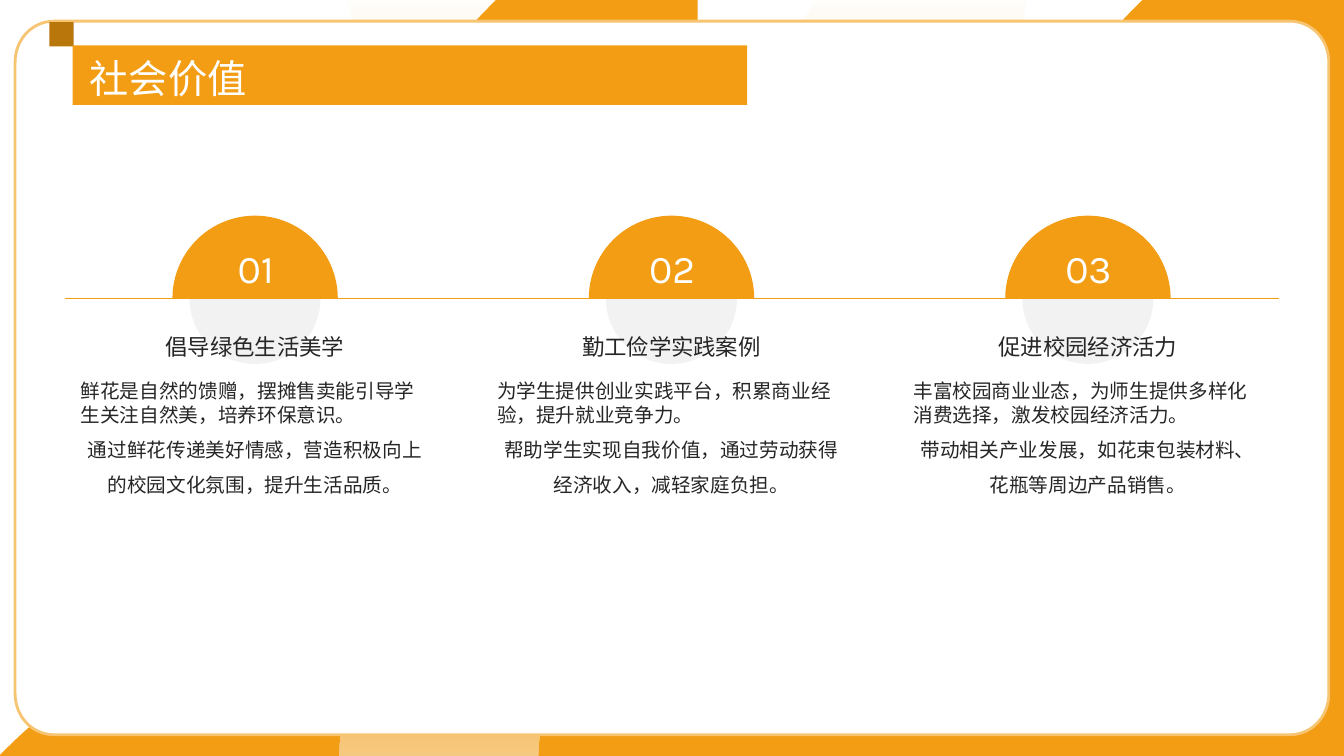
import math

from lxml import etree
from pptx import Presentation
from pptx import util as u
from pptx.dml import color
from pptx.enum import shapes, text
from pptx.oxml import ns

ORANGE, CREAM, WHITE, INK = "F29D13", "FCEBD0", "FFFFFF", "262626"
HAN = "Noto Sans CJK SC"
LEFT, MID = text.PP_ALIGN.LEFT, text.PP_ALIGN.CENTER
STEP = 4.13
SHIFT = 6.41

ARC = ((4.15, -2.3, 5.33, 5.33), 225, [
    (3.44, -0.03), (5.53, -0.03), (5.59, 0.07),
    (5.64, 0.15, 5.7, 0.23, 5.78, 0.3), (6.35, 0.87, 7.28, 0.87, 7.86, 0.3),
    (7.93, 0.23, 8, 0.15, 8.05, 0.07), (8.11, -0.03), (10.19, -0.03),
    (10.13, 0.24), (9.97, 0.77, 9.68, 1.28, 9.26, 1.7),
    (7.91, 3.05, 5.73, 3.05, 4.38, 1.7), (3.96, 1.28, 3.67, 0.77, 3.51, 0.24)])
RING = ((3.87, 3.84, 5.89, 5.89), 225, [
    (6.82, 4.05), (7.7, 4.05, 8.59, 4.38, 9.26, 5.06),
    (9.93, 5.73, 10.27, 6.62, 10.27, 7.5), (8.29, 7.5),
    (8.29, 7.12, 8.15, 6.75, 7.86, 6.46), (7.28, 5.88, 6.35, 5.88, 5.78, 6.46),
    (5.49, 6.75, 5.34, 7.12, 5.34, 7.5), (3.37, 7.5),
    (3.37, 6.62, 3.7, 5.73, 4.38, 5.06), (5.05, 4.38, 5.93, 4.05, 6.82, 4.05)])
FOOT = ((2.66, 3.24, 1.6, 6.92), 90, [
    (3.75, 5.9), (4.92, 5.9, 6, 6.29, 6.87, 6.94), (6.92, 6.97), (6.92, 7.5),
    (0, 7.5), (0, 7.49), (0.06, 7.43), (1, 6.49, 2.31, 5.9, 3.75, 5.9)])
SIDE = ((3.33, 0, 3.59, 7.5), 0, [
    (4.92, 0), (6.92, 0), (6.92, 7.5), (4.92, 7.5), (4.86, 7.44),
    (3.92, 6.5, 3.33, 5.19, 3.33, 3.75), (3.33, 2.31, 3.92, 1, 4.86, 0.06)])
PANEL = ((0.15, 0.21, 13.03, 7.07), 0, [
    (0.54, 0.21), (12.79, 0.21), (13.01, 0.21, 13.18, 0.39, 13.18, 0.62),
    (13.18, 6.88), (13.18, 7.11, 13.01, 7.29, 12.79, 7.29), (0.54, 7.29),
    (0.32, 7.29, 0.15, 7.11, 0.15, 6.88), (0.15, 0.62),
    (0.15, 0.39, 0.32, 0.21, 0.54, 0.21)])

ITEMS = [
    ("倡导绿色生活美学", "鲜花是自然的馈赠，摆摊售卖能引导学生关注自然美，培养环保意识。",
     "通过鲜花传递美好情感，营造积极向上的校园文化氛围，提升生活品质。"),
    ("勤工俭学实践案例", "为学生提供创业实践平台，积累商业经验，提升就业竞争力。",
     "帮助学生实现自我价值，通过劳动获得经济收入，减轻家庭负担。"),
    ("促进校园经济活力", "丰富校园商业业态，为师生提供多样化消费选择，激发校园经济活力。",
     "带动相关产业发展，如花束包装材料、花瓶等周边产品销售。"),
]


def rgb(code):
    """Turn a hex string into a colour."""
    return color.RGBColor.from_string(code)


def apply(obj, vals):
    """Set each named value on an object."""
    for key, val in vals.items():
        setattr(obj, key, val)


def paint(shape, code):
    """Give a shape a flat fill with no line or shadow."""
    shape.shadow.inherit = False
    shape.fill.solid()
    shape.fill.fore_color.rgb = rgb(code)
    shape.line.fill.background()
    return shape


def fade(shape):
    """Fade a fill from cream to clear orange."""
    shape.fill.gradient()
    shape.fill.gradient_angle = 315
    first, last = shape.fill.gradient_stops
    first.color.rgb, last.color.rgb = rgb(CREAM), rgb(ORANGE)
    node = last._gs.find(ns.qn("a:srgbClr"))
    etree.SubElement(node, ns.qn("a:alpha"), val="0")


def local(x, y, box, turn):
    """Turn a slide point into a point of a rotated frame."""
    left, top, wide, high = box
    rad = math.radians(-turn)
    x, y = x - left - wide / 2, y - top - high / 2
    return (u.Inches(x * math.cos(rad) - y * math.sin(rad) + wide / 2),
            u.Inches(x * math.sin(rad) + y * math.cos(rad) + high / 2))


def free(slide, form, dx=0, code=ORANGE):
    """Draw a closed outline of lines and curves."""
    box, turn, steps = form
    left, top, wide, high = map(u.Inches, box)
    make = slide.shapes.build_freeform(0, 0, scale=1)
    make.add_line_segments([(wide, 0), (wide, high), (0, high)], close=True)
    shape = make.convert_to_shape(left + u.Inches(dx), top)
    shape.rotation = turn
    line = next(shape._element.iter(ns.qn("a:path")))
    for node in list(line):
        line.remove(node)
    for n, step in enumerate(steps):
        kind = "cubicBezTo" if len(step) > 2 else "lnTo" if n else "moveTo"
        node = etree.SubElement(line, ns.qn("a:" + kind))
        for x, y in zip(step[::2], step[1::2]):
            x, y = local(x, y, box, turn)
            etree.SubElement(node, ns.qn("a:pt"), x=str(x), y=str(y))
    etree.SubElement(line, ns.qn("a:close"))
    return paint(shape, code)


def solid(slide, kind, box, code):
    """Draw a preset shape."""
    return paint(slide.shapes.add_shape(kind, *map(u.Inches, box)), code)


def half(slide, box, code, turn):
    """Draw a half disc."""
    pie = solid(slide, shapes.MSO_SHAPE.PIE, box, code)
    pie.adjustments[0], pie.adjustments[1] = 54.12, 162
    pie.rotation = turn


def write(shape, rows, font, size, code, anchor):
    """Fill a frame with rows of text, alignment and line spacing."""
    frame = shape.text_frame
    apply(frame, dict(margin_left=0, margin_top=0, margin_right=0, margin_bottom=0,
                      word_wrap=True, auto_size=text.MSO_AUTO_SIZE.NONE,
                      vertical_anchor=anchor))
    for n, (words, align, gap) in enumerate(rows):
        para = frame.add_paragraph() if n else frame.paragraphs[0]
        apply(para, dict(alignment=align, line_spacing=gap))
        run = para.add_run()
        run.text = words
        apply(run.font, dict(name=font, size=u.Pt(size), bold=False))
        run.font.color.rgb = rgb(code)
        etree.SubElement(run.font._rPr, ns.qn("a:ea"), typeface=font)


def label(slide, box, *args):
    """Add a text box."""
    write(slide.shapes.add_textbox(*map(u.Inches, box)), *args)


def back(slide):
    """Draw the backdrop and the white panel."""
    for glow, dx in ((ARC, 0), (RING, SHIFT)):
        fade(free(slide, glow))
        for form in (FOOT, SIDE):
            free(slide, form, dx)
    panel = free(slide, PANEL, 0, WHITE)
    panel.line.color.rgb = rgb("F7C471")
    panel.line.width = u.Pt(2)


def rule(slide):
    """Draw the line that the half discs stand on."""
    line = slide.shapes.add_connector(
        shapes.MSO_CONNECTOR.STRAIGHT, *map(u.Inches, (0.64, 2.96, 12.69, 2.96)))
    line.line.color.rgb = rgb(ORANGE)
    line.line.width = u.Pt(1)
    etree.SubElement(line._element.spPr, ns.qn("a:effectLst"))


def column(slide, n, item):
    """Draw one numbered column."""
    dx = n * STEP
    head, first, last = item
    top, mid = text.MSO_ANCHOR.TOP, text.MSO_ANCHOR.MIDDLE
    half(slide, (1.71 + dx, 2.14, 1.64, 1.64), ORANGE, 90)
    label(slide, (2.14 + dx, 2.38, 0.79, 0.39), [(f"{n + 1:02}", MID, 1.1)],
          "Karla", 28, WHITE, top)
    label(slide, (0.8 + dx, 3.22, 3.46, 0.35), [(head, MID, 1.3)], HAN, 16, INK, mid)
    label(slide, (0.8 + dx, 3.76, 3.46, 2.17),
          [(first, LEFT, 1.0), (last, MID, 1.5)], HAN, 14, INK, top)


def banner(slide):
    """Draw the title bar and place the title on it."""
    rect = shapes.MSO_SHAPE.RECTANGLE
    solid(slide, rect, (0.49, 0.22, 0.24, 0.24), "B9760A")
    solid(slide, rect, (0.72, 0.45, 6.69, 0.59), ORANGE)
    title = slide.shapes.title
    slide.shapes._spTree.append(title._element)
    apply(title, dict(left=u.Inches(0.89), top=u.Inches(0.49),
                      width=u.Inches(11.7), height=u.Inches(0.51)))
    write(title, [("社会价值", LEFT, 1.1)], HAN, 28, WHITE, text.MSO_ANCHOR.MIDDLE)


def main():
    """Build and save the slide."""
    deck = Presentation()
    apply(deck, dict(slide_width=u.Inches(13.33), slide_height=u.Inches(7.5)))
    slide = deck.slides.add_slide(deck.slide_layouts[5])
    back(slide)
    for n in range(len(ITEMS)):
        half(slide, (1.88 + n * STEP, 2.31, 1.3, 1.3), "F2F2F2", 270)
    rule(slide)
    for n, item in enumerate(ITEMS):
        column(slide, n, item)
    banner(slide)
    deck.save("out.pptx")


if __name__ == "__main__":
    main()
